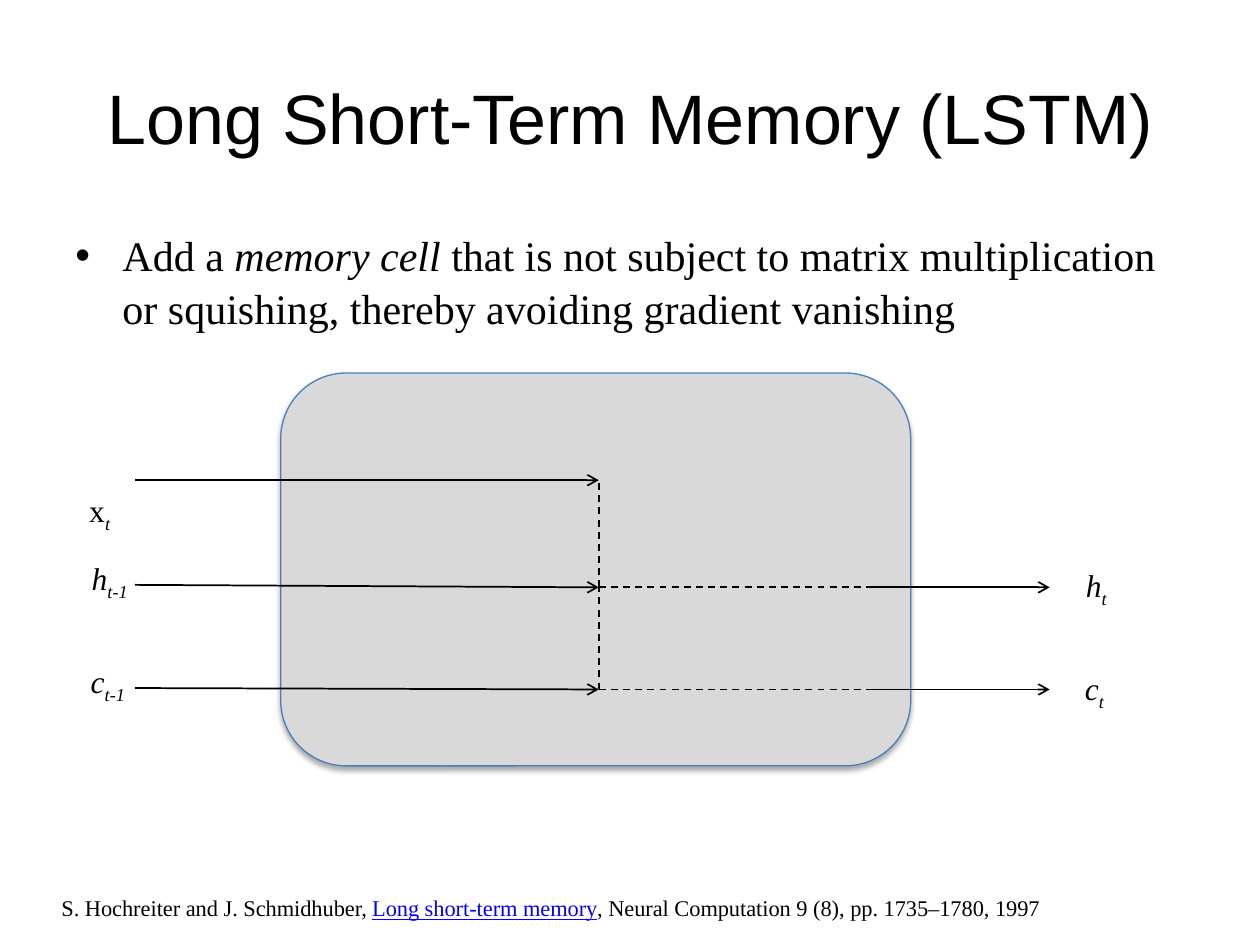
from dataclasses import dataclass

from lxml import etree
from pptx import Presentation
from pptx.dml.color import RGBColor
from pptx.enum.dml import MSO_LINE_DASH_STYLE as Dash
from pptx.enum.shapes import MSO_CONNECTOR as Connector, MSO_SHAPE as Shape
from pptx.enum.text import MSO_ANCHOR as Anchor, PP_ALIGN as Align
from pptx.oxml.ns import qn
from pptx.util import Cm, Pt


@dataclass(frozen=True)
class Theme:
    ink: str = "000000"
    link: str = "0000FF"
    cell_fill: str = "D9D9D9"
    cell_edge: str = "4B7EBC"
    heading_font: str = "Arial"
    body_font: str = "Times New Roman"
    title_size: int = 40
    body_size: int = 24
    citation_size: int = 22
    label_size: int = 18


@dataclass(frozen=True)
class Box:
    left: float
    top: float
    width: float
    height: float

    def inner(self, left, top, width, height):
        return Box(self.left + left, self.top + top, width, height)

    def lengths(self):
        return [Cm(value) for value in (self.left, self.top, self.width, self.height)]


THEME = Theme()


def colour(value):
    return RGBColor.from_string(value)


def add_child(parent, tag, **attributes):
    return etree.SubElement(parent, qn(tag), attributes)


def add_text_box(page, box, wrap=True):
    frame = page.shapes.add_textbox(*box.lengths()).text_frame
    frame.word_wrap = wrap
    return frame


def add_span(para, text, size, font=THEME.body_font, italic=False, baseline=0, ink=THEME.ink):
    span = para.add_run()
    span.text = text
    span.font.name = font
    span.font.size = Pt(size)
    span.font.italic = italic
    span.font.color.rgb = colour(ink)
    if baseline:
        span.font._element.set("baseline", str(baseline * 1000))
    return span


def add_title(page, box):
    frame = add_text_box(page, box)
    frame.vertical_anchor = Anchor.MIDDLE
    para = frame.paragraphs[0]
    para.alignment = Align.CENTER
    add_span(para, "Long Short-Term Memory (LSTM)", THEME.title_size, THEME.heading_font)


def add_body(page, box):
    para = add_text_box(page, box).paragraphs[0]
    para.line_spacing = 1.05
    properties = para._p.get_or_add_pPr()
    indent = Cm(0.95)
    properties.set("marL", str(indent))
    properties.set("indent", str(-indent))
    add_child(properties, "a:buFont", typeface=THEME.heading_font)
    add_child(properties, "a:buChar", char="•")
    add_span(para, "Add a ", THEME.body_size)
    add_span(para, "memory cell", THEME.body_size, italic=True)
    add_span(para, " that is not subject to matrix multiplication or squishing, "
             "thereby avoiding gradient vanishing", THEME.body_size)


def add_citation(page, box):
    para = add_text_box(page, box, wrap=False).paragraphs[0]
    size = THEME.citation_size
    add_span(para, "S. Hochreiter and J. Schmidhuber, ", size, baseline=30)
    title = add_span(para, "Long short-term memory", size, baseline=30, ink=THEME.link)
    title.font.underline = True
    add_span(para, ", Neural Computation 9 (8), pp. 1735–1780, 1997", size, baseline=30)


def add_cell(page, box):
    cell = page.shapes.add_shape(Shape.ROUNDED_RECTANGLE, *box.lengths())
    cell.fill.solid()
    cell.fill.fore_color.rgb = colour(THEME.cell_fill)
    cell.line.color.rgb = colour(THEME.cell_edge)
    cell.line.width = Pt(0.75)
    cell.shadow.inherit = False
    effects = cell._element.spPr.find(qn("a:effectLst"))
    shadow = add_child(effects, "a:outerShdw", blurRad=str(Pt(3.1)), dist=str(Pt(1.8)),
                       dir="5400000", rotWithShape="0")
    tint = add_child(shadow, "a:srgbClr", val=THEME.ink)
    add_child(tint, "a:alpha", val="35000")


def add_line(page, box, start, end, dashed=False):
    points = [Cm(value) for x, y in (start, end) for value in (box.left + x, box.top + y)]
    line = page.shapes.add_connector(Connector.STRAIGHT, *points)
    line.line.color.rgb = colour(THEME.ink)
    line.line.width = Pt(1)
    if dashed:
        line.line.dash_style = Dash.DASH
    else:
        add_child(line.line._get_or_add_ln(), "a:tailEnd", type="arrow")
    add_child(line._element.spPr, "a:effectLst")


def add_label(page, box, symbol, subscript, italic=True):
    para = add_text_box(page, box, wrap=False).paragraphs[0]
    add_span(para, symbol, THEME.label_size, italic=italic)
    add_span(para, subscript, THEME.label_size, italic=True, baseline=-25)


def add_diagram(page, box):
    entry, join, leave, finish = 1.17, 10.52, 15.98, 19.61
    x_row, h_row, c_row = 2.16, 4.32, 6.38
    add_cell(page, box.inner(4.11, 0, 12.7, box.height))

    arrows = [
        ((entry, x_row), (join, x_row)),
        ((entry, h_row - 0.05), (join, h_row)),
        ((entry, c_row - 0.03), (join, c_row)),
        ((leave, h_row), (finish, h_row)),
        ((leave, c_row), (finish, c_row)),
    ]
    for start, end in arrows:
        add_line(page, box, start, end)

    dashes = [
        ((join, h_row), (leave, h_row)),
        ((join, c_row), (leave, c_row)),
        ((join, h_row), (join, x_row)),
        ((join, c_row), (join, h_row)),
    ]
    for start, end in dashes:
        add_line(page, box, start, end, dashed=True)

    labels = [
        (0, 2.26, 1.07, "x", "t", False),
        (0.05, 3.63, 1.32, "h", "t-1", True),
        (0.03, 5.71, 1.24, "c", "t-1", True),
        (20.09, 3.76, 0.99, "h", "t", True),
        (20.07, 5.84, 0.91, "c", "t", True),
    ]
    for left, top, width, symbol, subscript, italic in labels:
        add_label(page, box.inner(left, top, width, 1.02), symbol, subscript, italic)


def main():
    deck = Presentation()
    deck.slide_width, deck.slide_height = Cm(25.4), Cm(19.05)
    page = deck.slides.add_slide(deck.slide_layouts[6])
    add_title(page, Box(1.27, 0.76, 22.86, 3.18))
    add_body(page, Box(1.27, 4.45, 22.86, 12.57))
    add_citation(page, Box(0.99, 17.81, 23.42, 0.89))
    add_diagram(page, Box(1.55, 7.52, 21.08, 7.92))
    deck.save("out.pptx")


if __name__ == "__main__":
    main()
